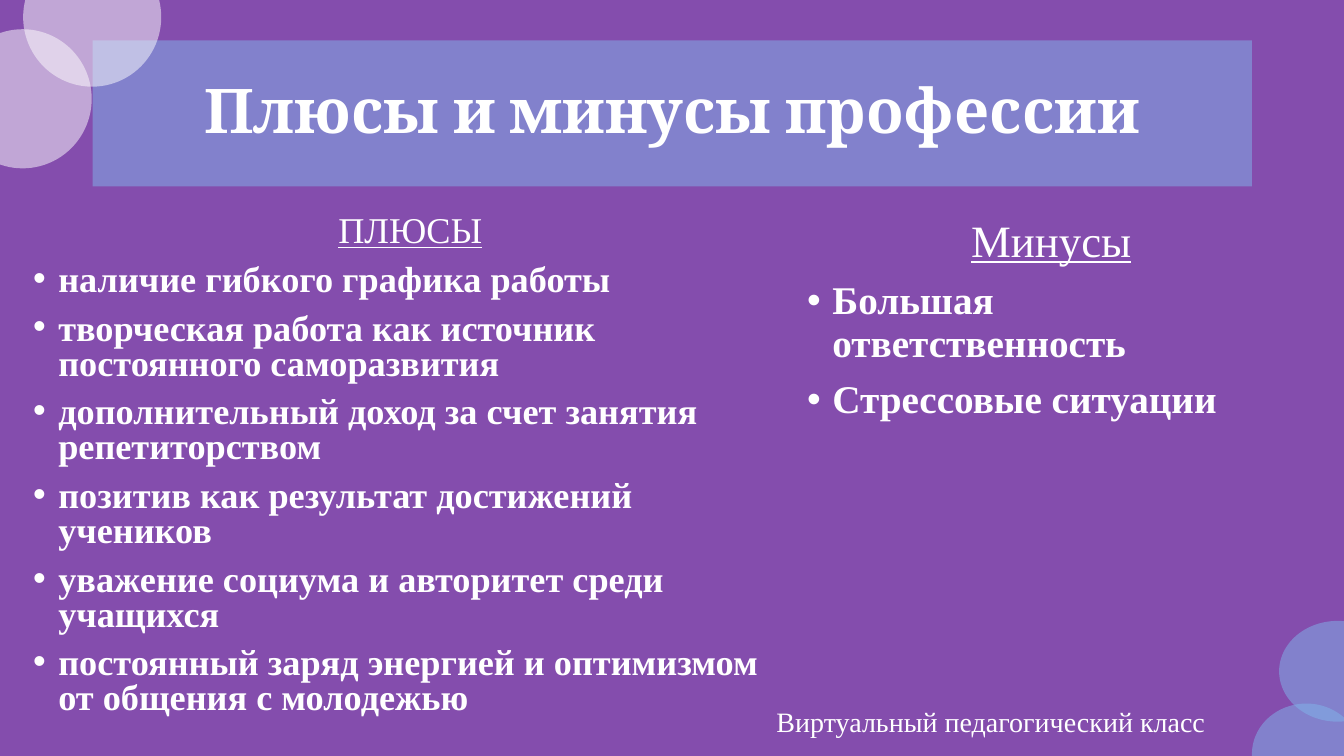
from dataclasses import dataclass

from lxml import etree
from pptx import Presentation
from pptx import util as u
from pptx.dml.color import RGBColor
from pptx.enum import shapes, text
from pptx.oxml import ns


@dataclass(frozen=True)
class Theme:
    back: str = "844DAD"
    blue: str = "81B6EB"
    white: str = "FFFFFF"
    alpha: int = 50
    serif: str = "Times New Roman"
    head: str = "Cambria"
    title: float = 44
    note: float = 20
    gap: float = 10
    indent: float = 18


@dataclass(frozen=True)
class Box:
    left: float
    top: float
    width: float
    height: float

    def spots(self) -> list[u.Length]:
        return [u.Pt(n) for n in (self.left, self.top, self.width, self.height)]


@dataclass(frozen=True)
class Disc:
    box: Box
    color: str


@dataclass(frozen=True)
class Panel:
    box: Box
    head: str
    items: tuple[str, ...]
    big: float
    size: float
    space: float


THEME = Theme()
BAND = Box(66.24, 28.8, 828, 104.4)
NOTE = Box(522, 504, 371.52, 22.32)
DISCS = (
    Disc(Box(894.24, 502.56, 77.76, 72), THEME.blue),
    Disc(Box(-33.12, 20.88, 98.64, 99.36), THEME.white),
    Disc(Box(16.56, -37.44, 98.64, 99.36), THEME.white),
    Disc(Box(913.68, 443.52, 83.52, 72), THEME.blue),
)
PLUS = Panel(
    Box(16.56, 150.48, 552.96, 376.56),
    "ПЛЮСЫ",
    (
        "наличие гибкого графика работы",
        "творческая работа как источник постоянного саморазвития",
        "дополнительный доход за счет занятия репетиторством",
        "позитив как результат достижений учеников",
        "уважение социума и авторитет среди учащихся",
        "постоянный заряд энергией и оптимизмом от общения с молодежью",
    ),
    25.9, 25.9, 0.8,
)
MINUS = Panel(
    Box(569.52, 152.64, 362.88, 323.28),
    "Минусы",
    ("Большая ответственность", "Стрессовые ситуации"),
    32, 28, 0.9,
)


def style(para, size: float, face: str = THEME.serif,
          bold: bool = False, under: bool = False) -> None:
    for run in para.runs:
        font = run.font
        font.size = u.Pt(size)
        font.name = face
        font.bold = bold
        font.underline = under
        font.color.rgb = RGBColor.from_string(THEME.white)


def tint(slide, kind, box: Box, color: str):
    shape = slide.shapes.add_shape(kind, *box.spots())
    shape.shadow.inherit = False
    shape.line.fill.background()
    shape.fill.solid()
    shape.fill.fore_color.rgb = RGBColor.from_string(color)
    tone = shape.element.spPr.find(".//" + ns.qn("a:srgbClr"))
    etree.SubElement(tone, ns.qn("a:alpha"), val=str(THEME.alpha * 1000))
    return shape


def frame(slide, box: Box):
    area = slide.shapes.add_textbox(*box.spots()).text_frame
    area.word_wrap = True
    return area


def bullet(para) -> None:
    props = para._p.get_or_add_pPr()
    props.set("marL", str(u.Pt(THEME.indent)))
    props.set("indent", str(-u.Pt(THEME.indent)))
    font = etree.SubElement(props, ns.qn("a:buFont"))
    font.set("typeface", "Arial")
    etree.SubElement(props, ns.qn("a:buChar"), char="•")


def draw_panel(slide, panel: Panel) -> None:
    area = frame(slide, panel.box)
    area.text = "\n".join((panel.head, *panel.items))
    for para in area.paragraphs:
        para.line_spacing = panel.space
        para.space_before = u.Pt(THEME.gap)
    head, *items = area.paragraphs
    head.alignment = text.PP_ALIGN.CENTER
    style(head, panel.big, under=True)
    for para in items:
        bullet(para)
        style(para, panel.size, bold=True)


def draw_title(slide) -> None:
    title = slide.shapes.title
    title.left, title.top, title.width, title.height = BAND.spots()
    area = title.text_frame
    area.text = "Плюсы и минусы профессии"
    area.word_wrap = True
    area.vertical_anchor = text.MSO_ANCHOR.MIDDLE
    para = area.paragraphs[0]
    para.alignment = text.PP_ALIGN.CENTER
    para.line_spacing = 0.9
    style(para, THEME.title, THEME.head, bold=True)
    band = tint(slide, shapes.MSO_SHAPE.RECTANGLE, BAND, THEME.blue)
    title.element.addprevious(band.element)


def draw_note(slide) -> None:
    area = frame(slide, NOTE)
    area.text = "Виртуальный педагогический класс"
    area.vertical_anchor = text.MSO_ANCHOR.MIDDLE
    para = area.paragraphs[0]
    para.alignment = text.PP_ALIGN.CENTER
    style(para, THEME.note)


def main() -> None:
    deck = Presentation()
    deck.slide_width, deck.slide_height = u.Pt(960), u.Pt(540)
    slide = deck.slides.add_slide(deck.slide_layouts[5])
    fill = slide.background.fill
    fill.solid()
    fill.fore_color.rgb = RGBColor.from_string(THEME.back)
    draw_title(slide)
    draw_panel(slide, PLUS)
    for disc in DISCS:
        tint(slide, shapes.MSO_SHAPE.OVAL, disc.box, disc.color)
    draw_panel(slide, MINUS)
    draw_note(slide)
    deck.save("out.pptx")


if __name__ == "__main__":
    main()
